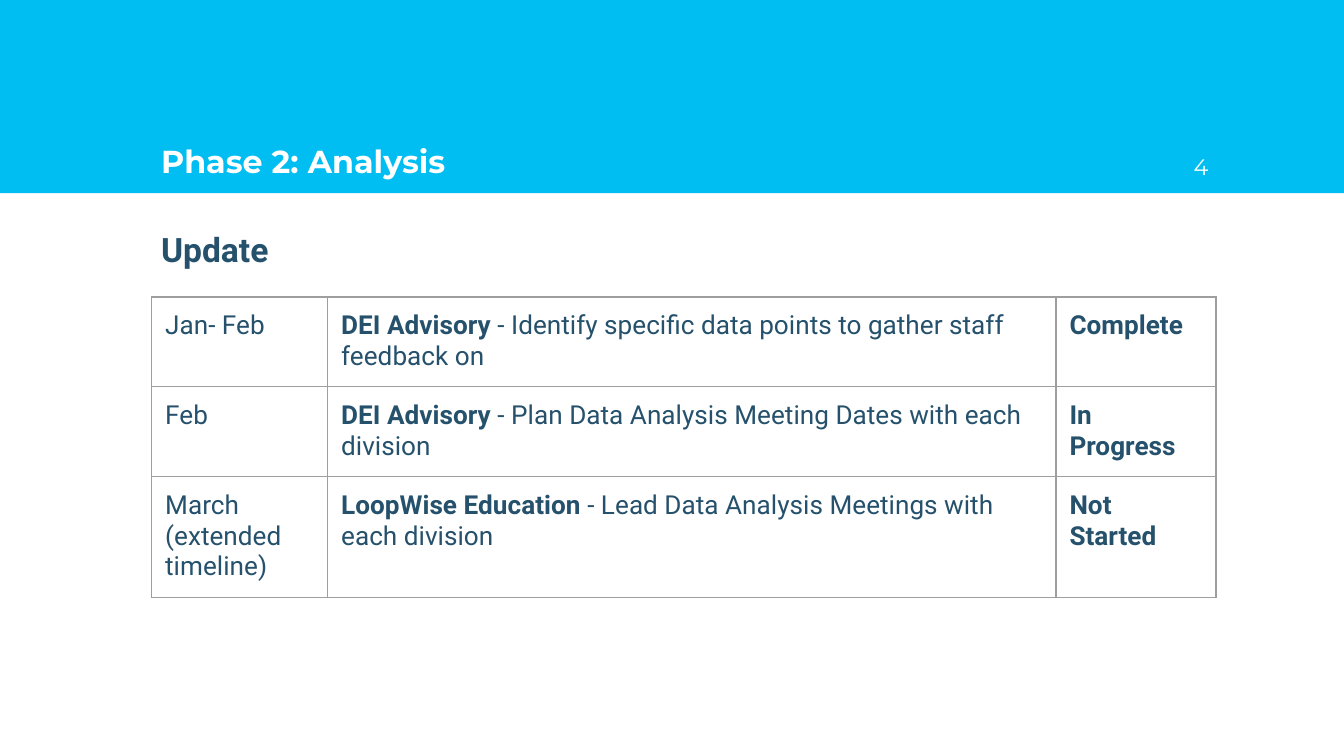
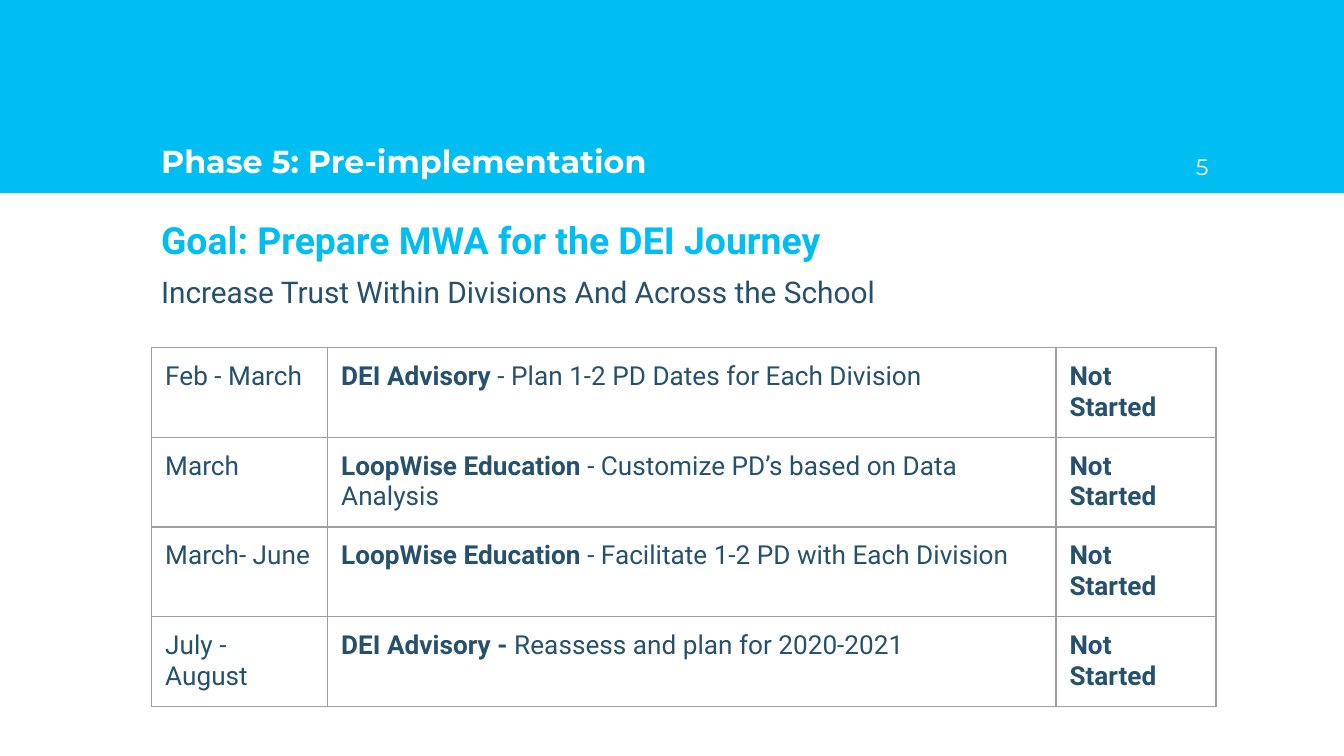
from dataclasses import dataclass

from lxml import etree
from pptx import Presentation
from pptx.dml.color import RGBColor
from pptx.enum.shapes import MSO_SHAPE
from pptx.enum.text import MSO_ANCHOR, PP_ALIGN
from pptx.oxml.ns import qn
from pptx.util import Pt

RECTANGLE = MSO_SHAPE.RECTANGLE
TOP, BOTTOM = MSO_ANCHOR.TOP, MSO_ANCHOR.BOTTOM
LEFT, RIGHT = PP_ALIGN.LEFT, PP_ALIGN.RIGHT


@dataclass(frozen=True)
class Theme:
    sky: str = "00BEF2"
    navy: str = "25516C"
    white: str = "FFFFFF"
    rule: str = "9E9E9E"
    heading_font: str = "Montserrat"
    body_font: str = "Roboto"
    title_size: float = 17
    number_size: float = 12
    goal_size: float = 20
    update_size: float = 18
    subtitle_size: float = 16
    table_size: float = 14
    line_height: float = 16.6
    inset: float = 7.2
    paragraph_gap: float = 6
    rule_width: float = 0.75


THEME = Theme()
PAGE_SIZE = (720, 405)
BAND_HEIGHT = 103.5
HEADER_TOP, HEADER_HEIGHT = 51, 52.5
TEXT_LEFT = 79.2
TABLE_LEFT = 81.3
COLUMN_WIDTHS = (94.3, 390.2, 85.7)


class DeckBuilder:
    def __init__(self, theme):
        self.theme = theme
        self.deck = Presentation()
        self.deck.slide_width, self.deck.slide_height = map(Pt, PAGE_SIZE)
        self.page = None

    def add_page(self, title, number):
        theme = self.theme
        self.page = self.deck.slides.add_slide(self.deck.slide_layouts[6])
        self.add_band()
        heading = {"font": theme.heading_font, "color": theme.white}
        self.add_text((TEXT_LEFT, HEADER_TOP, 561.6, HEADER_HEIGHT),
                      [[(title, {**heading, "size": theme.title_size, "bold": True})]],
                      anchor=BOTTOM)
        self.add_text((611.3, HEADER_TOP, 43.2, HEADER_HEIGHT),
                      [[(str(number), {**heading, "size": theme.number_size})]],
                      anchor=BOTTOM, align=RIGHT)

    def add_band(self):
        band = self.page.shapes.add_shape(RECTANGLE, 0, 0, Pt(PAGE_SIZE[0]), Pt(BAND_HEIGHT))
        band.shadow.inherit = False
        band.fill.solid()
        band.fill.fore_color.rgb = RGBColor.from_string(self.theme.sky)
        band.line.fill.background()

    def add_text(self, bounds, lines, anchor=TOP, align=LEFT):
        box = self.page.shapes.add_textbox(*map(Pt, bounds))
        frame = box.text_frame
        frame.word_wrap = True
        frame.vertical_anchor = anchor
        self.set_margins(frame)
        self.fill_text(frame, lines, align)

    def set_margins(self, holder):
        for side in ("left", "top", "right", "bottom"):
            setattr(holder, f"margin_{side}", Pt(self.theme.inset))

    def fill_text(self, frame, lines, align=LEFT):
        for index, spans in enumerate(lines):
            para = frame.add_paragraph() if index else frame.paragraphs[0]
            para.alignment = align
            para.space_before = Pt(self.theme.paragraph_gap if index else 0)
            for text, style in spans:
                span = para.add_run()
                span.text = text
                self.set_font(span.font, style)

    def set_font(self, font, style):
        values = {"name": style.get("font", self.theme.body_font),
                  "size": Pt(style["size"]),
                  "bold": style.get("bold", False)}
        for name, value in values.items():
            setattr(font, name, value)
        font.color.rgb = RGBColor.from_string(style.get("color", self.theme.navy))

    def add_schedule(self, top, rows, line_counts):
        plain = {"size": self.theme.table_size}
        strong = {**plain, "bold": True}
        heights = [2 * self.theme.inset + count * self.theme.line_height
                   for count in line_counts]
        bounds = (TABLE_LEFT, top, sum(COLUMN_WIDTHS), sum(heights))
        table = self.page.shapes.add_table(
            len(rows), len(COLUMN_WIDTHS), *map(Pt, bounds)).table
        table.first_row = table.horz_banding = False
        for column, width in zip(table.columns, COLUMN_WIDTHS):
            column.width = Pt(width)
        for row, height, (period, owner, task, status) in zip(table.rows, heights, rows):
            row.height = Pt(height)
            contents = ([(period, plain)],
                        [(owner, strong), (task, plain)],
                        [(status, strong)])
            for cell, spans in zip(row.cells, contents):
                self.set_margins(cell)
                self.fill_text(cell.text_frame, [spans])
                self.add_borders(cell)
                cell.fill.background()

    def add_borders(self, cell):
        properties = cell._tc.get_or_add_tcPr()
        for edge in ("lnL", "lnR", "lnT", "lnB"):
            line = etree.SubElement(properties, qn(f"a:{edge}"),
                                    w=str(Pt(self.theme.rule_width)))
            fill = etree.SubElement(line, qn("a:solidFill"))
            etree.SubElement(fill, qn("a:srgbClr"), val=self.theme.rule)


def build_analysis(builder):
    builder.add_page("Phase 2: Analysis", 4)
    builder.add_text((TEXT_LEFT, 115.2, 548, 46),
                     [[("Update", {"size": THEME.update_size, "bold": True})]])
    builder.add_schedule(159.1, [
        ("Jan- Feb", "DEI Advisory",
         " - Identify specific data points to gather staff feedback on", "Complete"),
        ("Feb", "DEI Advisory",
         " - Plan Data Analysis Meeting Dates with each division", "In Progress"),
        ("March (extended timeline)", "LoopWise Education",
         " - Lead Data Analysis Meetings with each division", "Not Started"),
    ], (2, 2, 3))


def build_preparation(builder):
    builder.add_page("Phase 5: Pre-implementation", 5)
    builder.add_text((TEXT_LEFT, 109.4, 548, 78.5), [
        [("Goal: Prepare MWA for the DEI Journey",
          {"size": THEME.goal_size, "bold": True, "color": THEME.sky})],
        [("Increase Trust Within Divisions And Across the School",
          {"size": THEME.subtitle_size})],
    ])
    builder.add_schedule(186.2, [
        ("Feb - March", "DEI Advisory",
         " - Plan 1-2 PD Dates for Each Division", "Not Started"),
        ("March", "LoopWise Education",
         " - Customize PD’s based on Data Analysis", "Not Started"),
        ("March- June", "LoopWise Education",
         " - Facilitate 1-2 PD with Each Division", "Not Started"),
        ("July - August", "DEI Advisory -",
         " Reassess and plan for 2020-2021", "Not Started"),
    ], (2, 2, 2, 2))


def main():
    builder = DeckBuilder(THEME)
    build_analysis(builder)
    build_preparation(builder)
    builder.deck.save("out.pptx")


if __name__ == "__main__":
    main()
